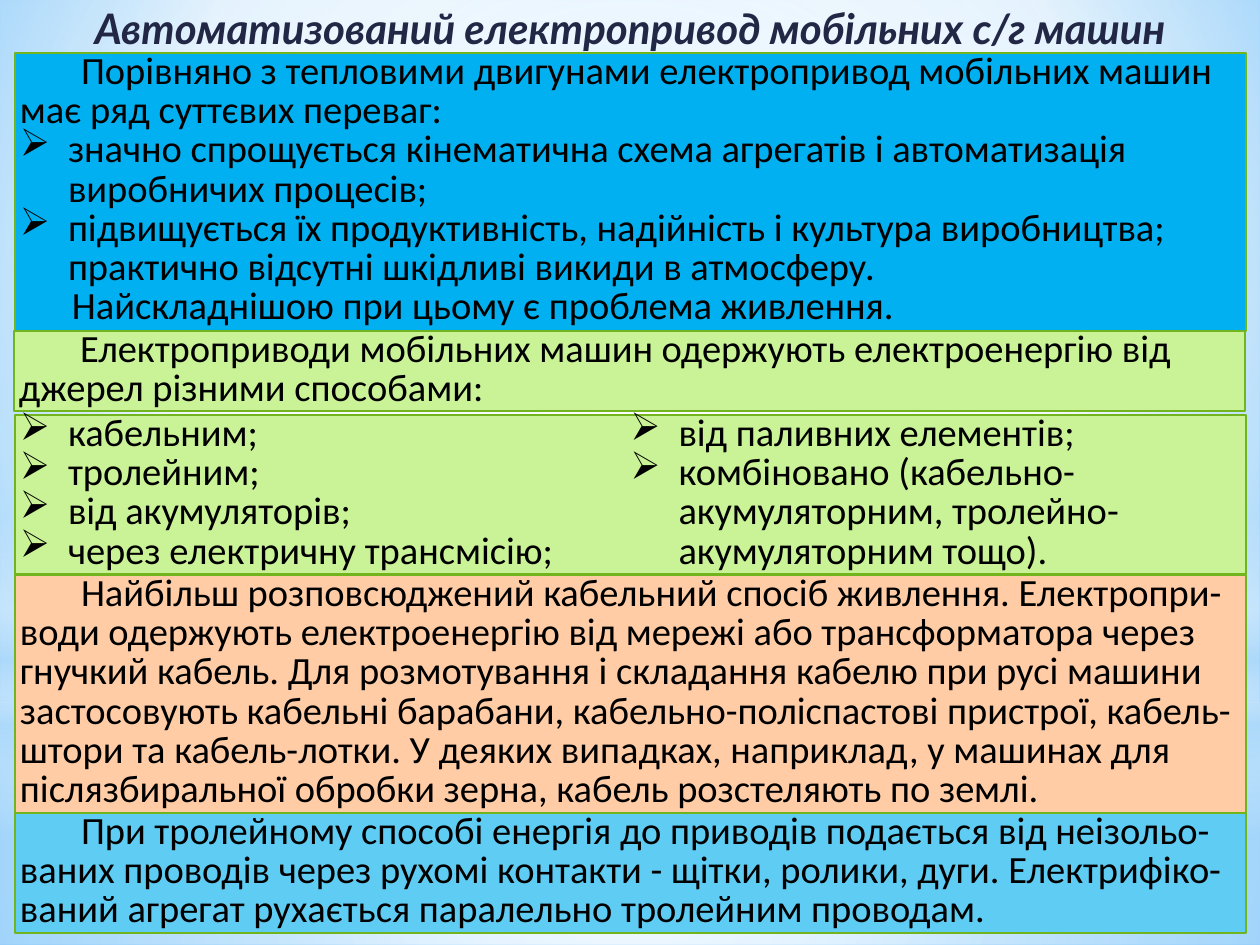
"""Builds the slide on electric drives of mobile farm machines."""
from lxml import etree
from pptx import Presentation, util as u
from pptx.dml.color import RGBColor
from pptx.enum import shapes, text
from pptx.oxml.ns import qn

SCALE = 914400 / 126
COLORS = {
    "title": "212745", "text": "000000", "border": "72B41D",
    "blue": "00B0F0", "green": "CAF297", "peach": "FFCCA6", "sky": "5ECCF3",
    "white": "FFFFFF", "haze": "B4DCFA", "light": "9ED5FF", "deep": "5BB9FF",
}
CENTER = (50, 50, 50, 50)
FIRST_LINE = (0, 61)
LAST_LINE = (0, 52)
BULLET = (48, -48)

BACKDROP = [
    ("RECTANGLE", (0, 703, 1260, 242),
     [(0, "white", 91), (37, "white", 76), (100, "haze", 79)], CENTER),
    ("RECTANGLE", (0, 0, 1260, 703),
     [(0, "white", 89), (48, "white", 62), (100, "haze", 79)], CENTER),
    ("RECTANGLE", (0, 519, 1260, 315),
     [(0, "white", 0), (29, "white", 30), (45, "haze", 40),
      (55, "white", 26), (65, "haze", 60), (100, "white", 0)], None),
    ("OVAL", (0, 221, 1260, 703),
     [(0, "white", 100), (56, "white", 0)], CENTER),
]

PANELS = [
    ((15, 53, 1231, 278), "blue", 1, [
        (FIRST_LINE, "Порівняно з тепловими двигунами електропривод мобільних машин має ряд суттєвих переваг:"),
        (BULLET, "значно спрощується кінематична схема агрегатів і автоматизація виробничих процесів;"),
        (BULLET, "підвищується їх продуктивність, надійність і культура виробництва; "
                 "практично відсутні шкідливі викиди в атмосферу."),
        (LAST_LINE, "Найскладнішою при цьому є проблема живлення."),
    ]),
    ((14, 331, 1231, 80), "green", 1, [
        (FIRST_LINE, "Електроприводи мобільних машин одержують електроенергію від джерел різними способами:"),
    ]),
    ((15, 575, 1231, 238), "peach", 1, [
        (FIRST_LINE, "Найбільш розповсюджений кабельний спосіб живлення. Електропри-води одержують "
                     "електроенергію від мережі або трансформатора через гнучкий кабель. Для розмотування "
                     "і складання кабелю при русі машини застосовують кабельні барабани, "
                     "кабельно-поліспастові пристрої, кабель-штори та кабель-лотки. У деяких випадках, "
                     "наприклад, у машинах для післязбиральної обробки зерна, кабель розстеляють по землі."),
    ]),
    ((15, 415, 1231, 159), "green", 2, [
        (BULLET, "кабельним;"),
        (BULLET, "тролейним;"),
        (BULLET, "від акумуляторів;"),
        (BULLET, "через електричну трансмісію;"),
        (BULLET, "від паливних елементів;"),
        (BULLET, "комбіновано (кабельно-акумуляторним, тролейно-акумуляторним тощо)."),
    ]),
    ((15, 813, 1231, 120), "sky", 1, [
        (FIRST_LINE, "При тролейному способі енергія до приводів подається від неізольо-ваних проводів "
                     "через рухомі контакти - щітки, ролики, дуги. Електрифіко-ваний агрегат рухається "
                     "паралельно тролейним проводам."),
    ]),
]


def px(n):
    """Turn pixels into EMU."""
    return u.Emu(round(n * SCALE))


def rgb(name):
    """Look up a colour."""
    return RGBColor.from_string(COLORS[name])


def set_gradient(fill, root, stops, focus):
    """Give a fill its stops and a circular or vertical direction."""
    fill.gradient()
    grad = root.find(".//" + qn("a:gradFill"))
    for child in list(grad):
        grad.remove(child)
    gs_list = etree.SubElement(grad, qn("a:gsLst"))
    for pos, color, alpha in stops:
        gs = etree.SubElement(gs_list, qn("a:gs"), pos=str(pos * 1000))
        clr = etree.SubElement(gs, qn("a:srgbClr"), val=COLORS[color])
        if alpha < 100:
            etree.SubElement(clr, qn("a:alpha"), val=str(alpha * 1000))
    if focus:
        circle = etree.SubElement(grad, qn("a:path"), path="circle")
        sides = {k: str(v * 1000) for k, v in zip("ltrb", focus)}
        etree.SubElement(circle, qn("a:fillToRect"), **sides)
    else:
        etree.SubElement(grad, qn("a:lin"), ang="5400000", scaled="0")


def add_backdrop(s):
    """Paint the background and its soft overlays."""
    set_gradient(s.background.fill, s.element,
                 [(0, "light", 100), (60, "white", 100), (100, "deep", 100)], (20, 10, 20, 60))
    for kind, box, stops, focus in BACKDROP:
        sp = s.shapes.add_shape(shapes.MSO_SHAPE[kind], *map(px, box))
        sp.shadow.inherit = False
        sp.line.fill.background()
        set_gradient(sp.fill, sp.element, stops, focus)


def setup_frame(tf, side):
    """Set margins, wrapping and growth of a text frame."""
    tf.margin_left = tf.margin_right = px(side)
    tf.margin_top = tf.margin_bottom = 0
    tf.word_wrap = True
    tf.vertical_anchor = text.MSO_ANCHOR.TOP
    tf.auto_size = text.MSO_AUTO_SIZE.SHAPE_TO_FIT_TEXT


def add_run(p, words, font, size, color):
    """Add a styled run to a paragraph and return it."""
    p.line_spacing = 0.85
    r = p.add_run()
    r.text = words
    r.font.name, r.font.size = font, u.Pt(size)
    r.font.color.rgb = rgb(color)
    return r


def add_title(s):
    """Add the slide title."""
    tf = s.shapes.add_textbox(*map(px, (15, 10, 1230, 43))).text_frame
    setup_frame(tf, 0)
    p = tf.paragraphs[0]
    p.alignment = text.PP_ALIGN.CENTER
    r = add_run(p, "Автоматизований електропривод мобільних с/г машин", "Lato", 24, "title")
    r.font.bold = r.font.italic = r.font.underline = True


def add_panel(s, box, color, columns, lines):
    """Add a bordered panel with indented or bulleted paragraphs."""
    sp = s.shapes.add_shape(shapes.MSO_SHAPE.RECTANGLE, *map(px, box))
    sp.shadow.inherit = False
    sp.fill.solid()
    sp.fill.fore_color.rgb = rgb(color)
    sp.line.color.rgb = rgb("border")
    sp.line.width = u.Pt(1.25)
    tf = sp.text_frame
    setup_frame(tf, 5)
    if columns > 1:
        sp.element.find(".//" + qn("a:bodyPr")).set("numCol", str(columns))
    for i, (style, words) in enumerate(lines):
        p = tf.add_paragraph() if i else tf.paragraphs[0]
        p.alignment = text.PP_ALIGN.LEFT
        add_run(p, words, "Calibri", 22, "text")
        margin, indent = style
        pr = p._p.get_or_add_pPr()
        pr.set("marL", str(px(margin)))
        pr.set("indent", str(px(indent)))
        if style == BULLET:
            etree.SubElement(pr, qn("a:buChar"), char="➢")


def main():
    """Build and save the slide."""
    prs = Presentation()
    prs.slide_width, prs.slide_height = px(1260), px(945)
    s = prs.slides.add_slide(prs.slide_layouts[6])
    add_backdrop(s)
    add_title(s)
    for panel in PANELS:
        add_panel(s, *panel)
    prs.save("out.pptx")


if __name__ == "__main__":
    main()
